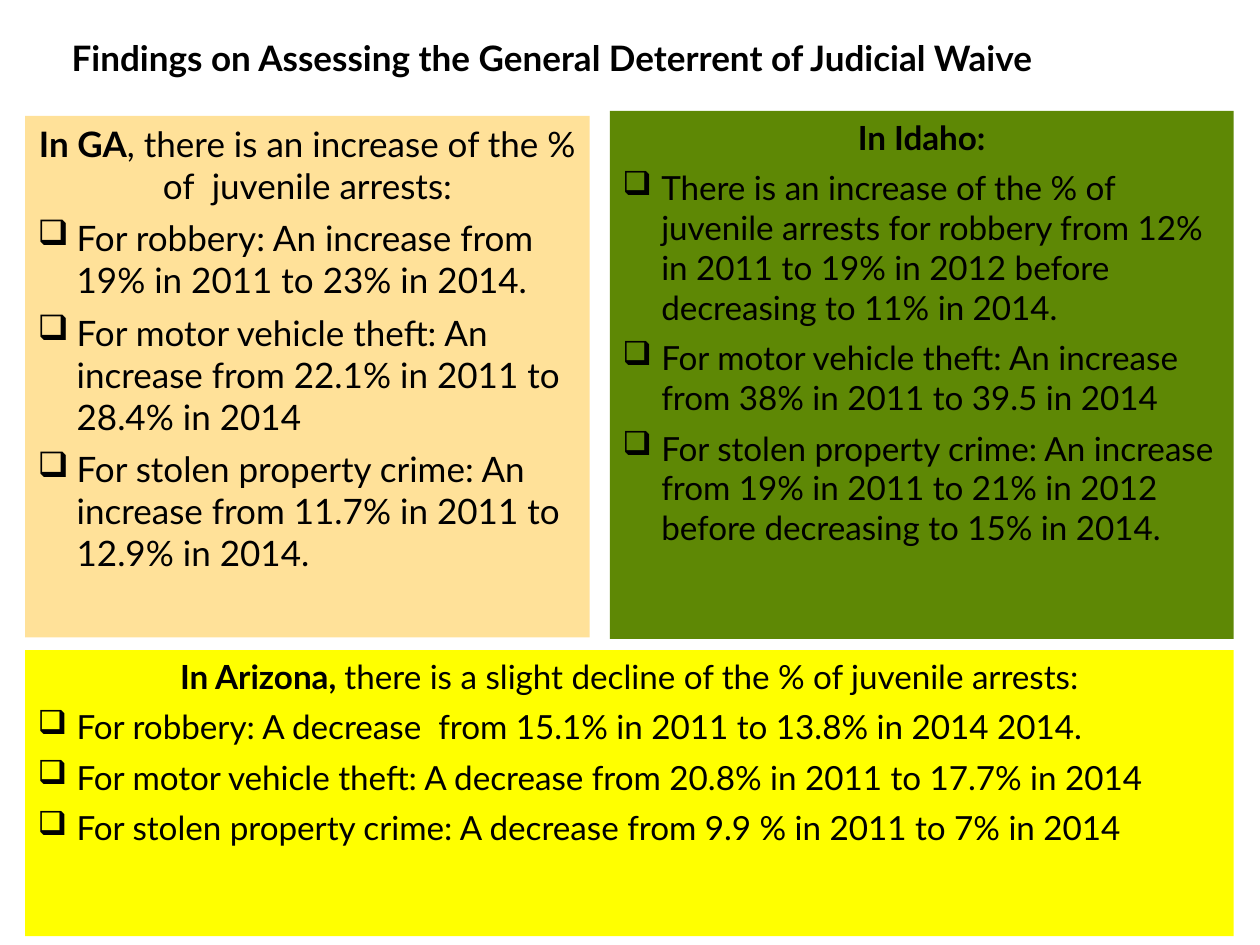
from lxml.etree import SubElement
from pptx import Presentation
from pptx.dml.color import RGBColor
from pptx.enum.shapes import MSO_SHAPE
from pptx.enum.text import MSO_ANCHOR, PP_ALIGN
from pptx.oxml.ns import qn
from pptx.util import Inches, Pt

FONT = "Lato"
INDENT = Inches(0.31)
LEFT, RIGHT = 0.2, 9.79


def color(hex_string):
    return RGBColor.from_string(hex_string)


def style(para, size):
    para.font.name = FONT
    para.font.size = Pt(size)
    para.font.color.rgb = color("000000")


deck = Presentation()
deck.slide_width, deck.slide_height = Inches(10), Inches(7.5)
page = deck.slides.add_slide(deck.slide_layouts[6])

# Title
title = page.shapes.add_textbox(Inches(0.47), Inches(0.24), Inches(9.01), Inches(0.44))
title.text_frame.word_wrap = True
para = title.text_frame.paragraphs[0]
para.text = "Findings on Assessing the General Deterrent of Judicial Waive"
style(para, 20)
para.font.bold = True

# State panels: left, top, right, bottom, fill, size, bold lead, rest of heading, findings
panels = [
    (LEFT, 0.92, 4.68, 5.06, "FFE199", 20,
     "In GA", ", there is an increase of the % of  juvenile arrests:",
     ["For robbery: An increase from 19% in 2011 to 23% in 2014.",
      "For motor vehicle theft: An increase from 22.1% in 2011 to 28.4% in 2014",
      "For stolen property crime: An increase from 11.7% in 2011 to 12.9% in 2014."]),
    (4.84, 0.88, RIGHT, 5.07, "5E8805", 19,
     "In Idaho:", "",
     ["There is an increase of the % of juvenile arrests for robbery from 12% in 2011 "
      "to 19% in 2012 before decreasing to 11% in 2014.",
      "For motor vehicle theft: An increase from 38% in 2011 to 39.5 in 2014",
      "For stolen property crime: An increase from 19% in 2011 to 21% in 2012 "
      "before decreasing to 15% in 2014."]),
    (LEFT, 5.16, RIGHT, 7.43, "FFFF00", 19,
     "In Arizona, ", "there is a slight decline of the % of juvenile arrests:",
     ["For robbery: A decrease  from 15.1% in 2011 to 13.8% in 2014 2014.",
      "For motor vehicle theft: A decrease from 20.8% in 2011 to 17.7% in 2014",
      "For stolen property crime: A decrease from 9.9 % in 2011 to 7% in 2014"]),
]

for left, top, right, bottom, fill, size, lead, rest, findings in panels:
    box = page.shapes.add_shape(MSO_SHAPE.RECTANGLE, Inches(left), Inches(top),
                                Inches(right - left), Inches(bottom - top))
    box.shadow.inherit = False
    box.fill.solid()
    box.fill.fore_color.rgb = color(fill)
    box.line.fill.background()
    frame = box.text_frame
    frame.word_wrap = True
    frame.vertical_anchor = MSO_ANCHOR.TOP

    # Centred heading with a bold lead
    para = frame.paragraphs[0]
    para.alignment = PP_ALIGN.CENTER
    para.space_before = Pt(6)
    style(para, size)
    span = para.add_run()
    span.text = lead
    span.font.bold = True
    if rest:
        para.add_run().text = rest

    # Findings with hanging checkbox bullets
    for finding in findings:
        para = frame.add_paragraph()
        para.text = finding
        para.alignment = PP_ALIGN.LEFT
        para.space_before = Pt(6)
        style(para, size)
        properties = para._p.get_or_add_pPr()
        properties.set("marL", str(INDENT))
        properties.set("indent", str(-INDENT))
        bullet = SubElement(properties, qn("a:buChar"))
        bullet.set("char", "❑")
        properties.find(qn("a:defRPr")).addprevious(bullet)

deck.save("out.pptx")
